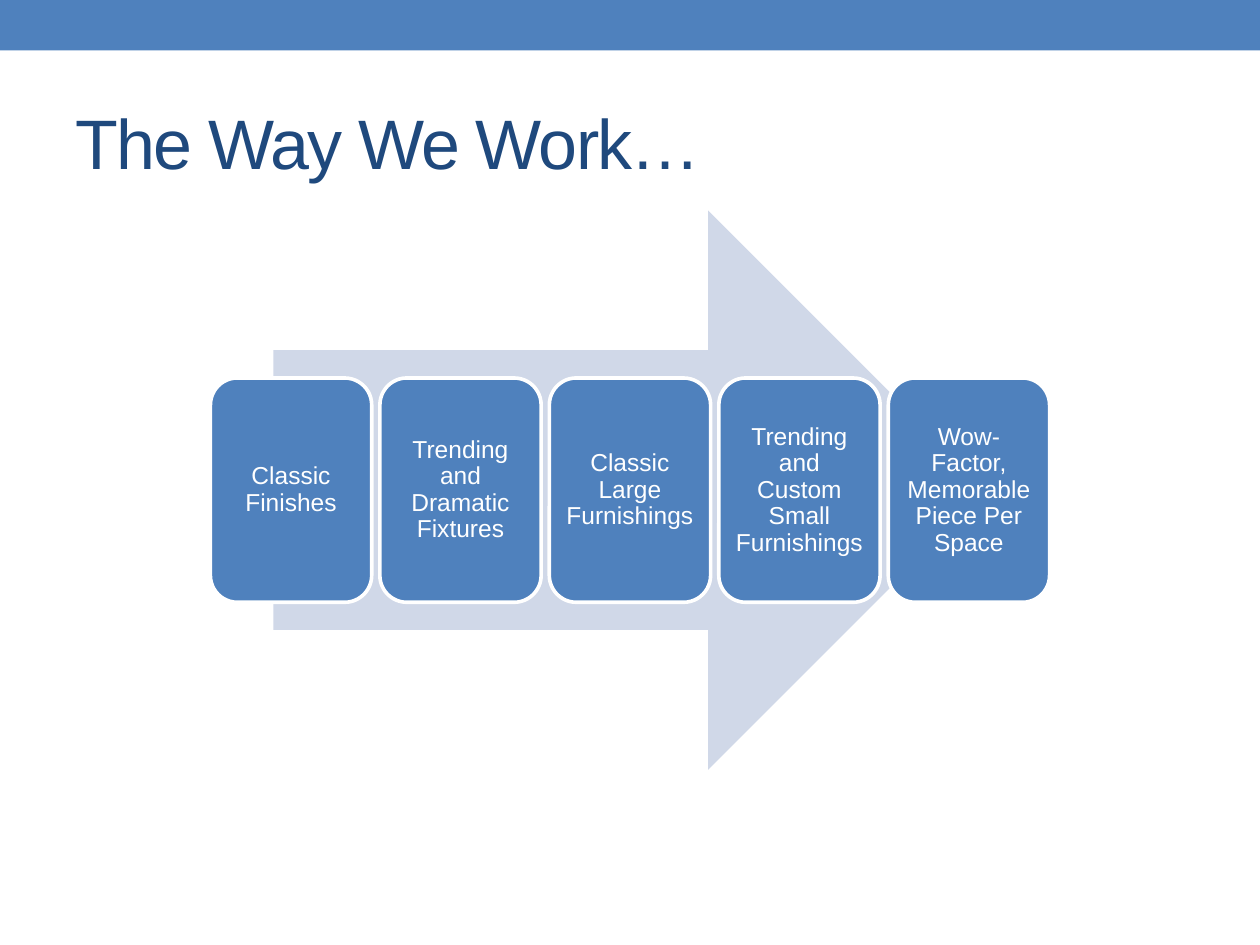
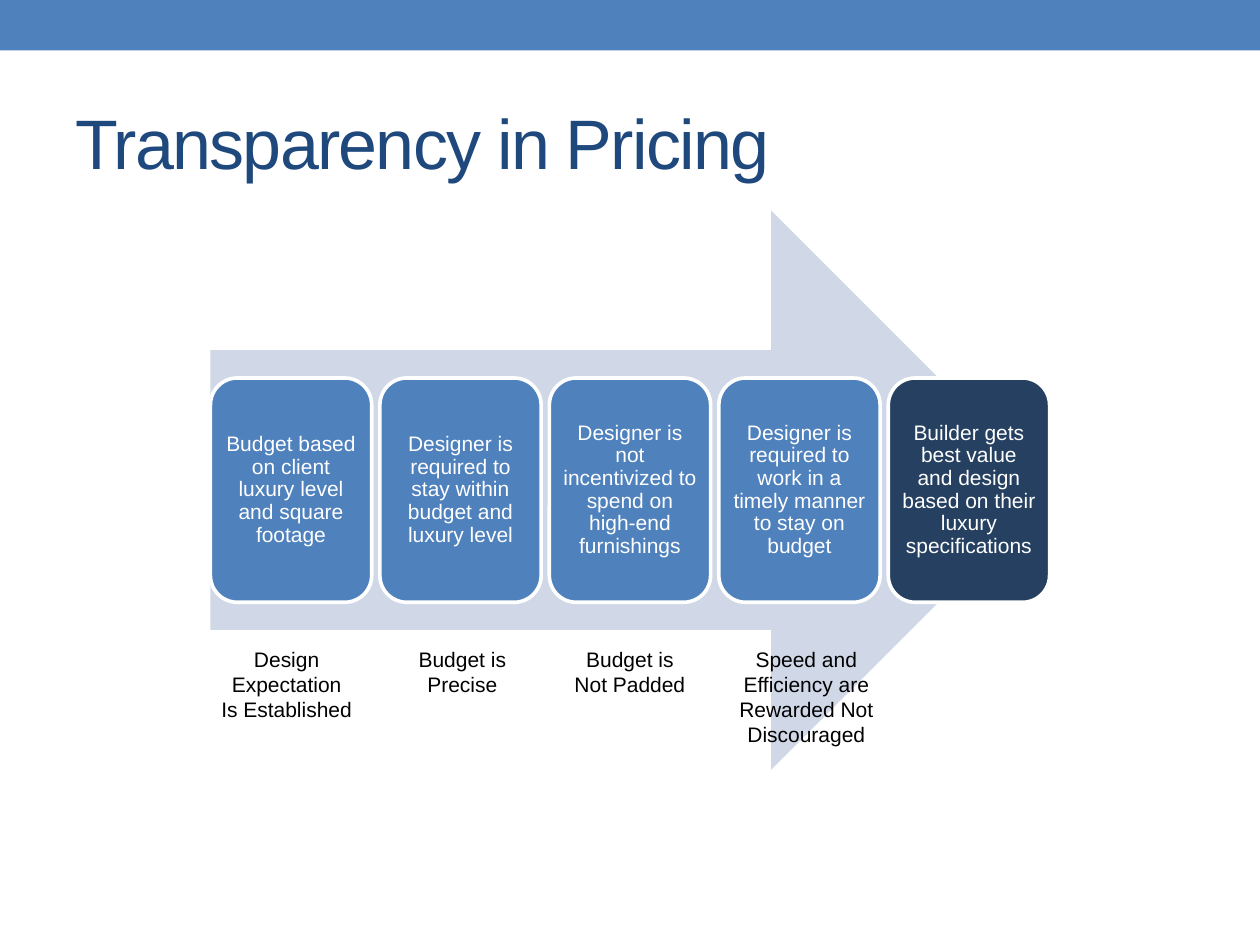
import dataclasses

import pptx
import pptx.dml.color
import pptx.enum.shapes
import pptx.enum.text
import pptx.util

Inches = pptx.util.Inches
Pt = pptx.util.Pt
Shape = pptx.enum.shapes.MSO_SHAPE
Align = pptx.enum.text.PP_ALIGN
Anchor = pptx.enum.text.MSO_ANCHOR


@dataclasses.dataclass(frozen=True)
class Theme:
    font: str = "Arial"
    blue: str = "4F81BD"
    navy: str = "254061"
    title: str = "1F497D"
    arrow: str = "D0D8E8"
    white: str = "FFFFFF"
    black: str = "000000"
    title_size: int = 40
    step_size: int = 14
    detail_size: int = 12
    title_spacing: int = -100


THEME = Theme()
CARD_LEFT, CARD_TOP, CARD_WIDTH, CARD_HEIGHT = 1.67, 3, 1.28, 1.78
CARD_PITCH = 1.345

WORK_STEPS = [
    "Classic Finishes",
    "Trending and Dramatic Fixtures",
    "Classic Large Furnishings",
    "Trending and Custom Small Furnishings",
    "Wow-Factor, Memorable Piece Per Space",
]
PRICING_STEPS = [
    "Budget based on client luxury level and square footage",
    "Designer is required to stay within budget and luxury level",
    "Designer is not incentivized to spend on high-end furnishings",
    "Designer is required to work in a timely manner to stay on budget",
    "Builder gets best value and design based on their luxury specifications",
]
PRICING_CAPTIONS = [
    (1.65, 1.25, 0.71, ["Design Expectation", "Is Established"]),
    (3.02, 1.3, 0.5, ["Budget is", "Precise"]),
    (4.35, 1.3, 0.5, ["Budget is", "Not Padded"]),
    (5.75, 1.3, 0.91, ["Speed and Efficiency are Rewarded Not Discouraged"]),
]


def color(value):
    return pptx.dml.color.RGBColor.from_string(value)


def apply_format(target, values):
    for name, value in values.items():
        setattr(target, name, value)


def write_text(shape, lines, size, text_color, frame_format, paragraph_format):
    frame = shape.text_frame
    apply_format(frame, {"word_wrap": True, **frame_format})
    frame.text = "\n".join(lines)
    for paragraph in frame.paragraphs:
        apply_format(paragraph, paragraph_format)
        for run in paragraph.runs:
            apply_format(run.font, {"name": THEME.font, "size": Pt(size)})
            run.font.color.rgb = color(text_color)


def add_filled_shape(slide, kind, box, fill):
    shape = slide.shapes.add_shape(kind, *map(Inches, box))
    shape.shadow.inherit = False
    shape.fill.solid()
    shape.fill.fore_color.rgb = color(fill)
    shape.line.fill.background()
    return shape


def add_title(slide, title):
    shape = slide.shapes.add_textbox(*map(Inches, (0.5, 0.58, 9, 1.08)))
    write_text(shape, [title], THEME.title_size, THEME.title,
               {"vertical_anchor": Anchor.MIDDLE}, {"alignment": Align.LEFT})
    run = shape.text_frame.paragraphs[0].runs[0]
    run._r.get_or_add_rPr().set("spc", str(THEME.title_spacing))


def add_card(slide, index, text, size, margin, fill):
    box = (CARD_LEFT + index * CARD_PITCH, CARD_TOP, CARD_WIDTH, CARD_HEIGHT)
    card = add_filled_shape(slide, Shape.ROUNDED_RECTANGLE, box, fill)
    card.line.color.rgb = color(THEME.white)
    card.line.width = Pt(2.08)
    sides = ("left", "top", "right", "bottom")
    margins = {f"margin_{side}": Inches(margin) for side in sides}
    write_text(card, [text], size, THEME.white,
               {"vertical_anchor": Anchor.MIDDLE, **margins},
               {"alignment": Align.CENTER, "line_spacing": 0.9})


def add_caption(slide, left, width, height, lines):
    caption = slide.shapes.add_textbox(*map(Inches, (left, 5.08, width, height)))
    write_text(caption, lines, THEME.detail_size, THEME.black,
               {"vertical_anchor": Anchor.TOP}, {"alignment": Align.CENTER})


def add_process_slide(presentation, title, arrow_left, arrow_width, steps,
                      size, margin, last_fill):
    slide = presentation.slides.add_slide(presentation.slide_layouts[6])
    add_filled_shape(slide, Shape.RECTANGLE, (0, 0, 10, 0.4), THEME.blue)
    add_title(slide, title)
    add_filled_shape(slide, Shape.RIGHT_ARROW,
                     (arrow_left, 1.67, arrow_width, 4.44), THEME.arrow)
    fills = [THEME.blue] * (len(steps) - 1) + [last_fill]
    for index, (text, fill) in enumerate(zip(steps, fills)):
        add_card(slide, index, text, size, margin, fill)
    return slide


def main():
    presentation = pptx.Presentation()
    apply_format(presentation, {"slide_width": Inches(10), "slide_height": Inches(7.5)})
    add_process_slide(presentation, "The Way We Work…", 2.17, 5.67,
                      WORK_STEPS, THEME.step_size, 0.06, THEME.blue)
    pricing = add_process_slide(presentation, "Transparency in Pricing", 1.67, 6.67,
                                PRICING_STEPS, THEME.detail_size, 0.04, THEME.navy)
    for caption in PRICING_CAPTIONS:
        add_caption(pricing, *caption)
    presentation.save("out.pptx")


if __name__ == "__main__":
    main()
